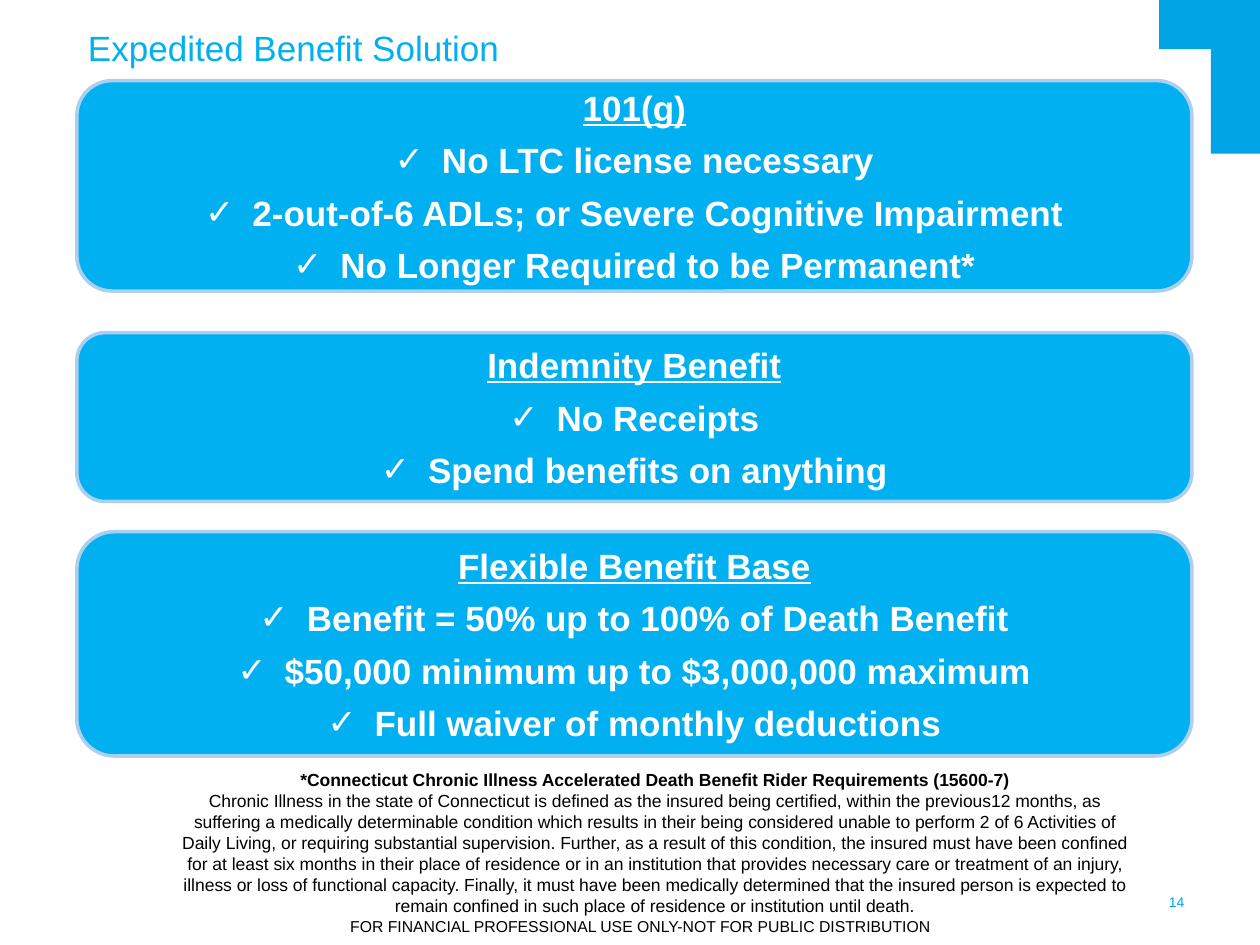
from dataclasses import dataclass

from lxml import etree
from pptx import Presentation
from pptx import util as u
from pptx.dml.color import RGBColor
from pptx.enum import shapes, text
from pptx.oxml import ns

CORNER_BLUE = RGBColor(0x00, 0xA4, 0xE4)
PANEL_BLUE = RGBColor(0x00, 0xB0, 0xF0)
PANEL_EDGE = RGBColor(0xAA, 0xCF, 0xEF)
WHITE = RGBColor(0xFF, 0xFF, 0xFF)
BLACK = RGBColor(0x00, 0x00, 0x00)
FONT = "Arial"
CENTER = text.PP_ALIGN.CENTER
HANGING = u.Pt(27)


@dataclass(frozen=True)
class Box:
    left: float
    top: float
    width: float
    height: float

    def lengths(self) -> tuple:
        return tuple(u.Pt(v) for v in (self.left, self.top, self.width, self.height))


@dataclass(frozen=True)
class Panel:
    top: float
    height: float
    heading: str
    benefits: tuple[str, ...]


@dataclass(frozen=True)
class Caption:
    box: Box
    lines: tuple[str, ...]
    size: float
    color: RGBColor
    align: text.PP_ALIGN
    grow: bool = False
    inset: bool = True
    indent: float = 0
    bold_first: bool = False
    anchor: text.MSO_ANCHOR = text.MSO_ANCHOR.TOP


CORNER_BARS = (Box(662.4, 0, 57.6, 28.08), Box(691.92, 0, 28.08, 87.84))

PANELS = (
    Panel(46.08, 120.24, "101(g)", (
        "No LTC license necessary",
        "2-out-of-6 ADLs; or Severe Cognitive Impairment",
        "No Longer Required to be Permanent*",
    )),
    Panel(190.08, 96.48, "Indemnity Benefit", (
        "No Receipts",
        "Spend benefits on anything",
    )),
    Panel(303.84, 128.16, "Flexible Benefit Base", (
        "Benefit = 50% up to 100% of Death Benefit",
        "$50,000 minimum up to $3,000,000 maximum",
        "Full waiver of monthly deductions",
    )),
)

CAPTIONS = (
    Caption(Box(654.48, 510.48, 22.32, 10.08), ("14",), 8, CORNER_BLUE,
            text.PP_ALIGN.RIGHT, inset=False, anchor=text.MSO_ANCHOR.MIDDLE),
    Caption(Box(185.76, 520.56, 360, 18),
            ("FOR FINANCIAL PROFESSIONAL USE ONLY-NOT FOR PUBLIC DISTRIBUTION",),
            9, BLACK, CENTER, grow=True),
    Caption(Box(43.2, 11.52, 633.6, 24.48), ("Expedited Benefit Solution",),
            20, PANEL_BLUE, text.PP_ALIGN.LEFT),
    Caption(Box(59.76, 435.6, 592.56, 92.16), (
        "*Connecticut Chronic Illness Accelerated Death Benefit Rider Requirements (15600-7)",
        "Chronic Illness in the state of Connecticut is defined as the insured being "
        "certified, within the previous12 months, as suffering a medically determinable "
        "condition which results in their being considered unable to perform 2 of 6 "
        "Activities of Daily Living, or requiring substantial supervision. Further, as a "
        "result of this condition, the insured must have been confined for at least six "
        "months in their place of residence or in an institution that provides necessary "
        "care or treatment of an injury, illness or loss of functional capacity. Finally, "
        "it must have been medically determined that the insured person is expected to "
        "remain confined in such place of residence or institution until death.",
    ), 10, BLACK, CENTER, grow=True, indent=36, bold_first=True),
)


def write_line(paragraph, words: str, size: float, color: RGBColor,
               align: text.PP_ALIGN, bold: bool = False, underline: bool = False) -> None:
    paragraph.text = words
    paragraph.alignment = align
    for run in paragraph.runs:
        font = run.font
        font.name, font.size, font.bold = FONT, u.Pt(size), bold
        font.underline = underline
        font.color.rgb = color


def add_check(paragraph) -> None:
    paragraph.space_before = u.Pt(6)
    properties = paragraph._p.get_or_add_pPr()
    properties.set("marL", str(HANGING))
    properties.set("indent", str(-HANGING))
    etree.SubElement(properties, ns.qn("a:buFont")).set("typeface", FONT)
    etree.SubElement(properties, ns.qn("a:buChar")).set("char", "✓")


def draw_filled(slide, preset: shapes.MSO_SHAPE, box: Box, fill: RGBColor):
    figure = slide.shapes.add_shape(preset, *box.lengths())
    figure.shadow.inherit = False
    figure.fill.solid()
    figure.fill.fore_color.rgb = fill
    figure.line.fill.background()
    return figure


def draw_panel(slide, panel: Panel) -> None:
    box = Box(43.92, panel.top, 637.2, panel.height)
    card = draw_filled(slide, shapes.MSO_SHAPE.ROUNDED_RECTANGLE, box, PANEL_BLUE)
    card.line.color.rgb = PANEL_EDGE
    card.line.width = u.Pt(2)
    frame = card.text_frame
    frame.word_wrap = True
    frame.vertical_anchor = text.MSO_ANCHOR.MIDDLE
    write_line(frame.paragraphs[0], panel.heading, 20, WHITE, CENTER, True, True)
    for benefit in panel.benefits:
        paragraph = frame.add_paragraph()
        add_check(paragraph)
        write_line(paragraph, benefit, 20, WHITE, CENTER, True)


def draw_caption(slide, caption: Caption) -> None:
    frame = slide.shapes.add_textbox(*caption.box.lengths()).text_frame
    frame.word_wrap = True
    frame.vertical_anchor = caption.anchor
    if caption.grow:
        frame.auto_size = text.MSO_AUTO_SIZE.SHAPE_TO_FIT_TEXT
    if not caption.inset:
        frame.margin_left = frame.margin_right = u.Pt(0)
        frame.margin_top = frame.margin_bottom = u.Pt(0)
    for index, words in enumerate(caption.lines):
        paragraph = frame.add_paragraph() if index else frame.paragraphs[0]
        if caption.indent:
            paragraph.level = 1
            properties = paragraph._p.get_or_add_pPr()
            properties.set("marL", str(u.Pt(caption.indent)))
            properties.set("indent", "0")
        write_line(paragraph, words, caption.size, caption.color, caption.align,
                   caption.bold_first and index == 0)


def main() -> None:
    """Build the Expedited Benefit Solution slide."""
    deck = Presentation()
    deck.slide_width, deck.slide_height = u.Pt(720), u.Pt(540)
    slide = deck.slides.add_slide(deck.slide_layouts[6])
    for bar in CORNER_BARS:
        draw_filled(slide, shapes.MSO_SHAPE.RECTANGLE, bar, CORNER_BLUE)
    for panel in PANELS:
        draw_panel(slide, panel)
    for caption in CAPTIONS:
        draw_caption(slide, caption)
    deck.save("out.pptx")


if __name__ == "__main__":
    main()
